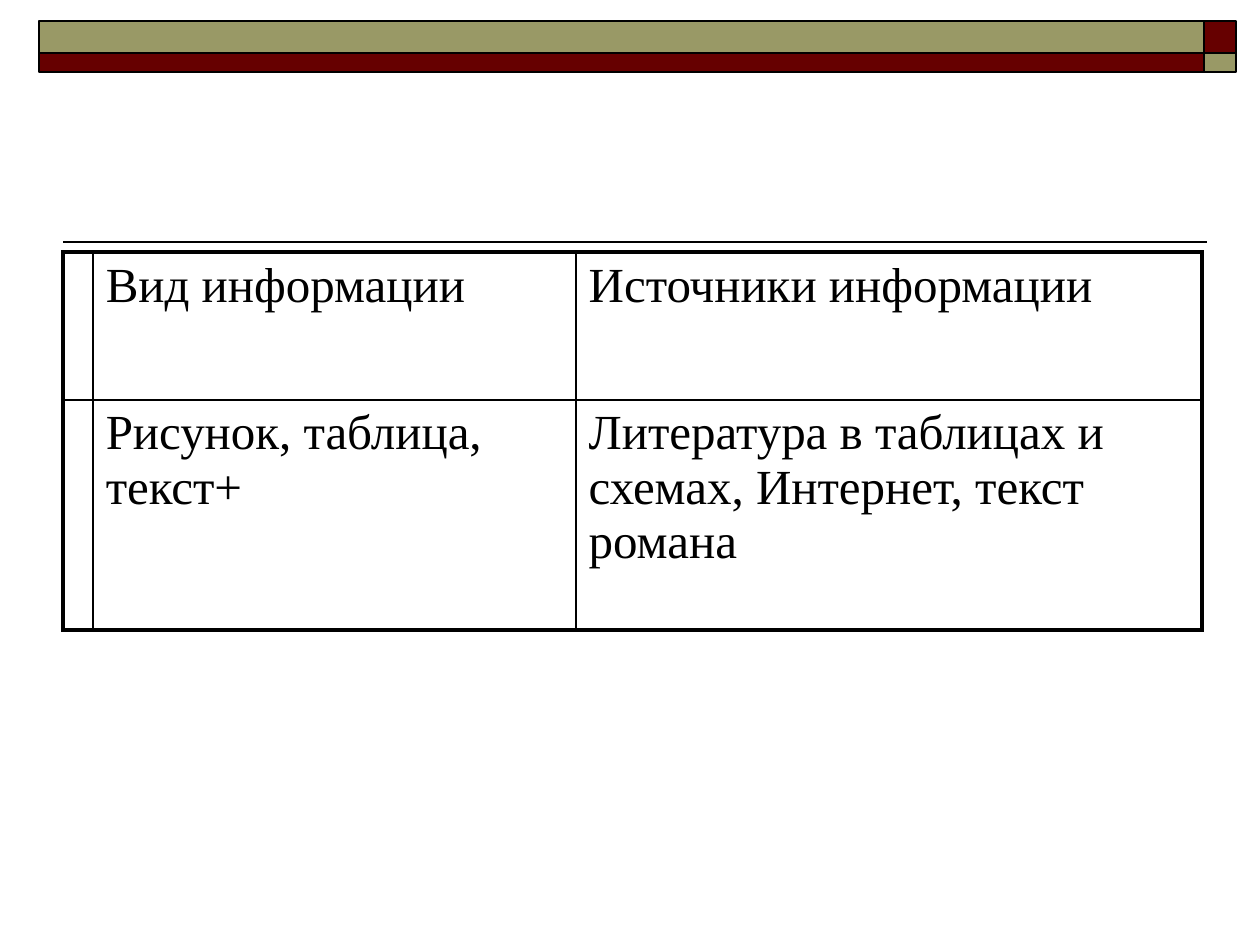
from typing import NamedTuple

from pptx import Presentation
from pptx import util as u
from pptx.dml.color import RGBColor
from pptx.enum import shapes
from pptx.oxml import ns, xmlchemy

PX_PER_INCH = 126
BLACK, OLIVE, MAROON = "000000", "999966", "660000"
THIN, THICK = 1, 2.25


class Block(NamedTuple):
    left: int
    top: int
    width: int
    height: int
    fill: str


def px(length: int) -> u.Emu:
    return u.Emu(round(length * u.Inches(1) / PX_PER_INCH))


def color(value: str) -> RGBColor:
    return RGBColor.from_string(value)


def draw_block(slide, block: Block) -> None:
    bar = slide.shapes.add_shape(
        shapes.MSO_SHAPE.RECTANGLE, *(px(length) for length in block[:4]))
    bar.shadow.inherit = False
    bar.fill.solid()
    bar.fill.fore_color.rgb = color(block.fill)
    bar.line.color.rgb = color(BLACK)
    bar.line.width = u.Pt(THIN)


def draw_rule(slide, start: int, end: int, y: int) -> None:
    rule = slide.shapes.add_connector(
        shapes.MSO_CONNECTOR.STRAIGHT, px(start), px(y), px(end), px(y))
    rule.line.color.rgb = color(BLACK)
    rule.line.width = u.Pt(THIN)
    xmlchemy.OxmlElement  # element factory used below
    rule._element.spPr.append(xmlchemy.OxmlElement("a:effectLst"))


def add_border(cell, side: str, points: float) -> None:
    border = xmlchemy.OxmlElement(f"a:ln{side}")
    border.set("w", str(u.Pt(points)))
    fill = xmlchemy.OxmlElement("a:solidFill")
    shade = xmlchemy.OxmlElement("a:srgbClr")
    shade.set("val", BLACK)
    fill.append(shade)
    border.append(fill)
    cell._tc.get_or_add_tcPr().append(border)


def write_cell(cell, words: str) -> None:
    cell.text_frame.text = words
    paragraph = cell.text_frame.paragraphs[0]
    paragraph.font.size = u.Pt(28)
    # Space before is a share of the line height
    before = xmlchemy.OxmlElement("a:spcBef")
    share = xmlchemy.OxmlElement("a:spcPct")
    share.set("val", "20000")
    before.append(share)
    paragraph._p.get_or_add_pPr().insert(0, before)
    for run in paragraph.runs:
        run.font.name = "Times New Roman"
        run.font.size = u.Pt(28)
        run.font.color.rgb = color(BLACK)


def draw_table(slide, left: int, top: int, widths: list[int],
               heights: list[int], rows: list[list[str]]) -> None:
    table = slide.shapes.add_table(
        len(heights), len(widths), px(left), px(top),
        px(sum(widths)), px(sum(heights))).table
    table.first_row = table.horz_banding = False
    for column, width in zip(table.columns, widths):
        column.width = px(width)
    for row, height in zip(table.rows, heights):
        row.height = px(height)

    last_row, last_column = len(heights) - 1, len(widths) - 1
    for r, row_words in enumerate(rows):
        for c, words in enumerate(row_words):
            cell = table.cell(r, c)
            write_cell(cell, words)
            # Thick outer frame, thin inner grid
            outer = {"L": c == 0, "R": c == last_column,
                     "T": r == 0, "B": r == last_row}
            for side, on_frame in outer.items():
                add_border(cell, side, THICK if on_frame else THIN)
            cell.fill.background()


def main() -> None:
    deck = Presentation()
    deck.slide_width, deck.slide_height = u.Inches(10), u.Inches(7.5)
    slide = deck.slides.add_slide(deck.slide_layouts[6])

    # Header band: two bars with swapped colours at the right end
    left, split, right = 39, 1204, 1236
    draw_rule(slide, 1207, 63, 242)
    for top, height, bar_fill, end_fill in (
            (21, 32, OLIVE, MAROON), (53, 19, MAROON, OLIVE)):
        draw_block(slide, Block(left, top, split - left, height, bar_fill))
        draw_block(slide, Block(split, top, right - split, height, end_fill))

    # Kinds of information and their sources
    draw_table(slide, 63, 252, [29, 483, 626], [148, 230], [
        ["", "Вид информации", "Источники информации"],
        ["", "Рисунок, таблица, текст+",
         "Литература в таблицах и схемах, Интернет, текст романа"],
    ])
    deck.save("out.pptx")


if __name__ == "__main__":
    main()
